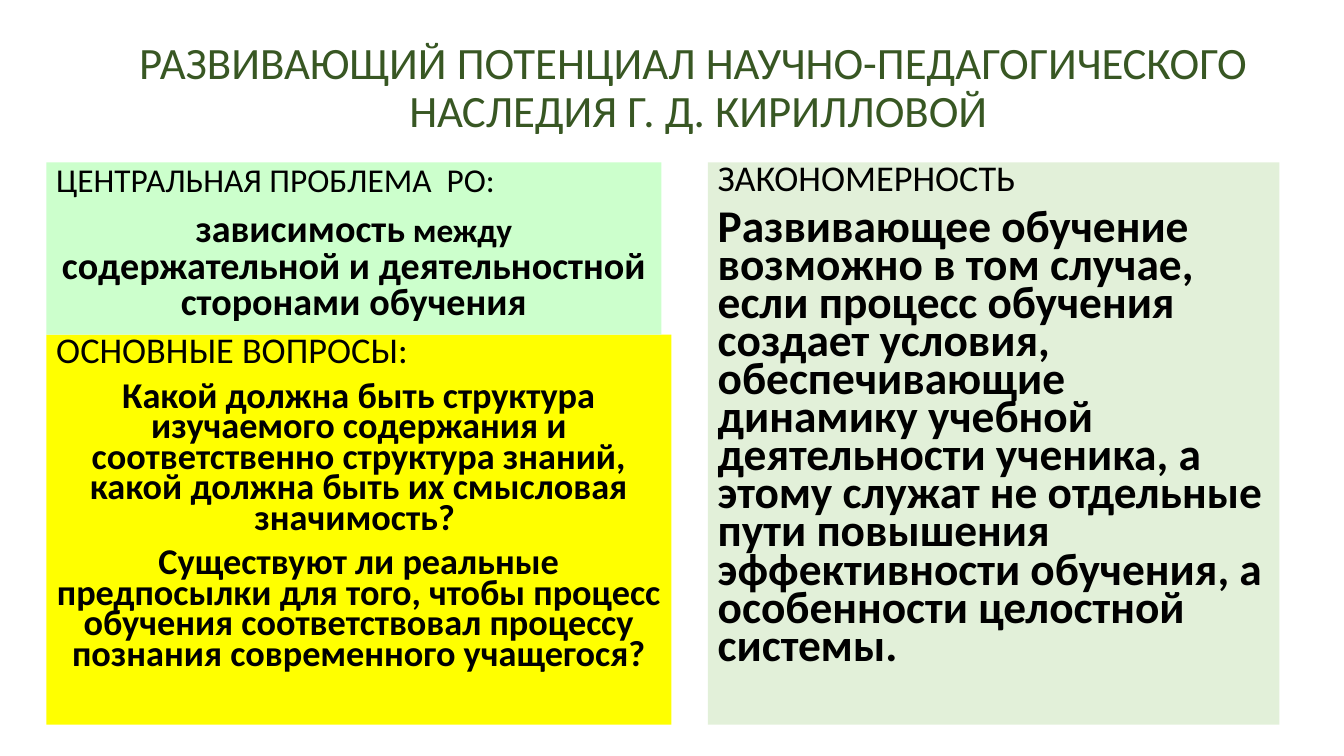
"""Build a slide on the developmental potential of G. D. Kirillova's legacy."""
from pptx import Presentation
from pptx.dml.color import RGBColor
from pptx.enum.shapes import MSO_SHAPE
from pptx.enum.text import MSO_ANCHOR, PP_ALIGN
from pptx.util import Inches, Pt

COLORS = {"title": "385723", "text": "000000", "problem": "CCFFCC",
          "questions": "FFFF00", "regularity": "E2F0D9"}
LEFT, CENTER = PP_ALIGN.LEFT, PP_ALIGN.CENTER


def format_run(run, size, bold, color):
    run.font.name = "Calibri"
    run.font.size = Pt(size)
    run.font.bold = bold
    run.font.color.rgb = RGBColor.from_string(COLORS[color])


presentation = Presentation()
presentation.slide_width = Inches(13.33)
presentation.slide_height = Inches(7.5)
slide = presentation.slides.add_slide(presentation.slide_layouts[6])

title = slide.shapes.add_textbox(Inches(0.93), Inches(0.16), Inches(12), Inches(1.45))
title.text_frame.word_wrap = True
title.text_frame.vertical_anchor = MSO_ANCHOR.MIDDLE
heading = title.text_frame.paragraphs[0]
heading.text = "РАЗВИВАЮЩИЙ ПОТЕНЦИАЛ НАУЧНО-ПЕДАГОГИЧЕСКОГО \vНАСЛЕДИЯ Г. Д. КИРИЛЛОВОЙ"
heading.alignment = CENTER
heading.line_spacing = 0.9
for run in heading.runs:
    format_run(run, 32, False, "title")

panels = [
    ("questions", (0.46, 3.32, 6.2, 3.87), 0.7, [
        (LEFT, [("ОСНОВНЫЕ ВОПРОСЫ:", 25.9, False)]),
        (CENTER, [("Какой должна быть структура изучаемого содержания и "
                   "соответственно структура знаний, какой должна быть их "
                   "смысловая значимость? ", 25.9, True)]),
        (CENTER, [("Существуют ли реальные предпосылки для того, чтобы процесс "
                   "обучения соответствовал процессу познания современного "
                   "учащегося?", 25.9, True)]),
    ]),
    ("regularity", (7.02, 1.61, 5.67, 5.58), 0.7, [
        (LEFT, [("ЗАКОНОМЕРНОСТЬ", 25.9, False)]),
        (LEFT, [("Развивающее обучение возможно в том случае, если процесс "
                 "обучения создает условия, обеспечивающие динамику учебной "
                 "деятельности ученика, а этому служат не отдельные пути "
                 "повышения эффективности обучения, а особенности целостной "
                 "системы.", 32.4, True)]),
    ]),
    ("problem", (0.46, 1.61, 6.1, 1.71), 0.8, [
        (LEFT, [("ЦЕНТРАЛЬНАЯ ПРОБЛЕМА  РО:", 23.8, False)]),
        (CENTER, [("зависимость", 27.2, True), (" между ", 23.8, True),
                  ("содержательной и деятельностной сторонами обучения", 27.2, True)]),
    ]),
]

for topic, box, line_spacing, paragraphs in panels:
    panel = slide.shapes.add_shape(MSO_SHAPE.RECTANGLE, *map(Inches, box))
    panel.shadow.inherit = False
    panel.fill.solid()
    panel.fill.fore_color.rgb = RGBColor.from_string(COLORS[topic])
    panel.line.fill.background()
    frame = panel.text_frame
    frame.word_wrap = True
    frame.vertical_anchor = MSO_ANCHOR.TOP
    for index, (alignment, pieces) in enumerate(paragraphs):
        paragraph = frame.add_paragraph() if index else frame.paragraphs[0]
        paragraph.alignment = alignment
        paragraph.line_spacing = line_spacing
        paragraph.space_before = Pt(10)
        for text, size, bold in pieces:
            run = paragraph.add_run()
            run.text = text
            format_run(run, size, bold, "text")

presentation.save("out.pptx")
